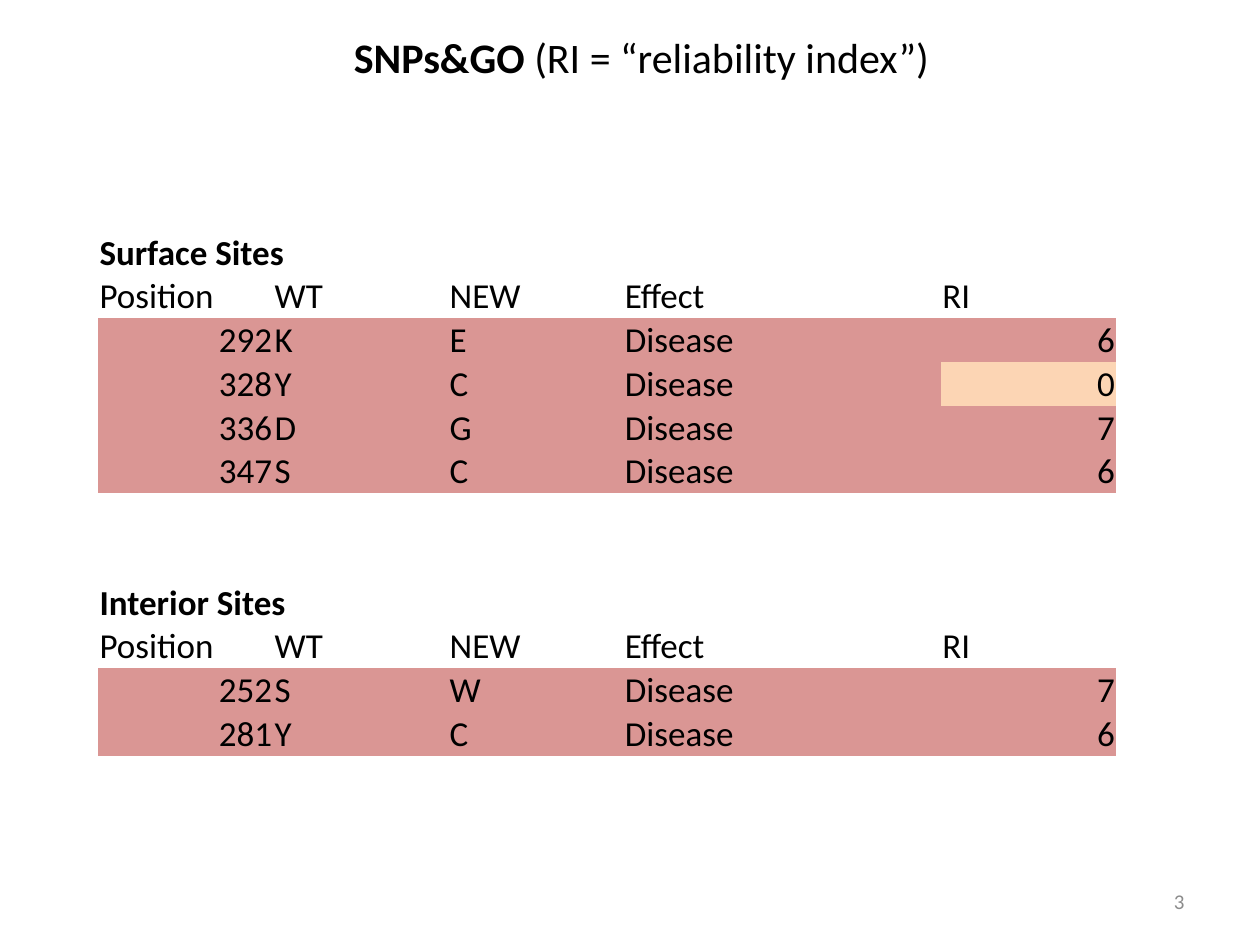
from pptx import Presentation
from pptx.dml.color import RGBColor
from pptx.enum.text import MSO_ANCHOR as Anchor, PP_ALIGN as Align
from pptx.oxml.ns import qn
from pptx.util import Inches, Pt

BLACK, GREY, RED, PEACH = "000000", "8C8C8C", "DA9694", "FCD5B4"
NO_STYLE = "{2D5ABB26-0587-4C30-8999-92F81FD0307C}"
COLUMNS = [1.39, 1.39, 1.39, 2.52, 1.39]
HEADINGS = ["Position", "WT", "NEW", "Effect", "RI"]
SURFACE = [
    ["292", "K", "E", "Disease", "6"],
    ["328", "Y", "C", "Disease", "0"],
    ["336", "D", "G", "Disease", "7"],
    ["347", "S", "C", "Disease", "6"],
]
INTERIOR = [
    ["252", "S", "W", "Disease", "7"],
    ["281", "Y", "C", "Disease", "6"],
]


def colour(value):
    return RGBColor.from_string(value)


class SlideBuilder:
    def __init__(self, page, font="Calibri"):
        self.page = page
        self.font = font

    def style(self, para, size, ink=BLACK, bold=None, align=Align.LEFT):
        para.alignment = align
        para.font.name = self.font
        para.font.size = Pt(size)
        para.font.color.rgb = colour(ink)
        para.font.bold = bold

    def text(self, place, runs, size, ink=BLACK, align=Align.LEFT,
             anchor=Anchor.TOP, wrap=True):
        box = self.page.shapes.add_textbox(*map(Inches, place))
        frame = box.text_frame
        frame.word_wrap = wrap
        frame.vertical_anchor = anchor
        para = frame.paragraphs[0]
        self.style(para, size, ink, align=align)
        for words, bold in runs:
            span = para.add_run()
            span.text = words
            span.font.bold = bold

    def cell(self, cell, words, fill=None, bold=False):
        cell.margin_left = cell.margin_right = cell.margin_top = Inches(0.01)
        cell.margin_bottom = 0
        cell.vertical_anchor = Anchor.BOTTOM
        if fill:
            cell.fill.solid()
            cell.fill.fore_color.rgb = colour(fill)
        else:
            cell.fill.background()
        para = cell.text_frame.paragraphs[0]
        para.text = words
        align = Align.RIGHT if words.isdigit() else Align.LEFT
        self.style(para, 20, bold=bold, align=align)

    def table(self, place, widths, rows):
        frame = self.page.shapes.add_table(
            len(rows), len(widths), *map(Inches, place))
        table = frame.table
        table.first_row = table.horz_banding = False
        table._tbl.tblPr.find(qn("a:tableStyleId")).text = NO_STYLE
        for column, width in zip(table.columns, widths):
            column.width = Inches(width)
        for r, row in enumerate(rows):
            is_title = len(row) == 1
            is_data = len(row) > 1 and row[0].isdigit()
            for c in range(len(widths)):
                words = row[c] if c < len(row) else ""
                fill = RED if is_data else None
                if words == "0":
                    fill = PEACH
                self.cell(table.cell(r, c), words, fill, is_title)
            if is_title:
                table.cell(r, 0).merge(table.cell(r, 1))


def main():
    deck = Presentation()
    deck.slide_width, deck.slide_height = Inches(10), Inches(7.5)
    builder = SlideBuilder(deck.slides.add_slide(deck.slide_layouts[6]))
    builder.text(
        (2.71, 0.2, 4.82, 0.5),
        [("SNPs&GO ", True), ("(RI = “reliability index”)", False)],
        24, wrap=False)
    rows = [["Surface Sites"], HEADINGS, *SURFACE, [], [],
            ["Interior Sites"], HEADINGS, *INTERIOR]
    builder.table((0.78, 1.83, sum(COLUMNS), 4.17), COLUMNS, rows)
    builder.text((7.17, 6.95, 2.33, 0.4), [("3", None)], 12, GREY,
                 Align.RIGHT, Anchor.MIDDLE)
    deck.save("out.pptx")


if __name__ == "__main__":
    main()
